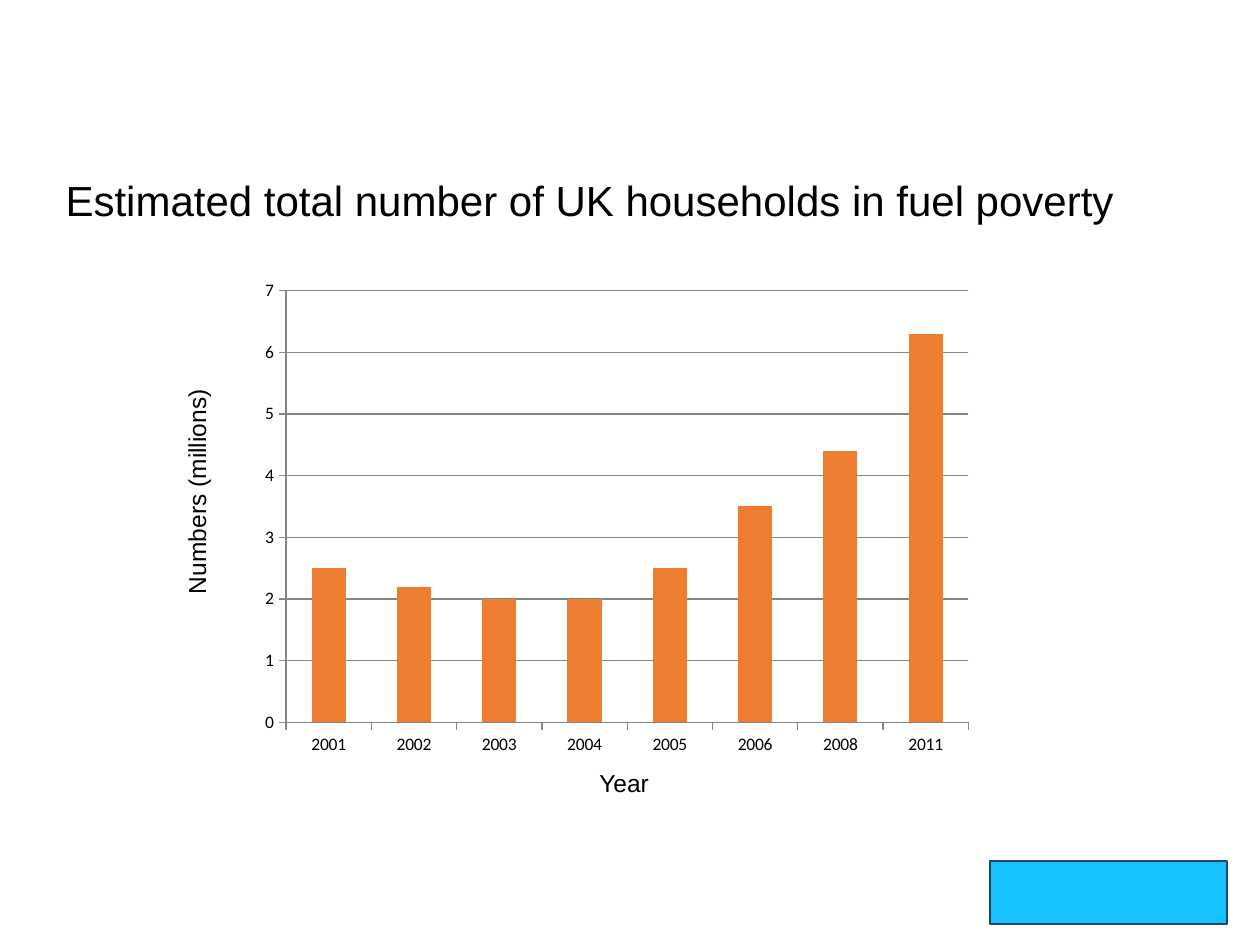
from dataclasses import dataclass

from lxml import etree
from pptx import Presentation
from pptx import util as u
from pptx.chart.data import CategoryChartData
from pptx.dml.color import RGBColor
from pptx.enum import chart as charts, shapes, text
from pptx.oxml.ns import qn

EMU_PER_PX = 914400 / 126
COLORS = {
    "text": "000000",
    "bar": "ED7D31",
    "axis": "868686",
    "accent": "15C2FF",
    "outline": "28445D",
}
HOUSEHOLDS = {
    "2001": 2.5,
    "2002": 2.2,
    "2003": 2,
    "2004": 2,
    "2005": 2.5,
    "2006": 3.5,
    "2008": 4.4,
    "2011": 6.3,
}
PLOT_LAYOUT = {"x": 0.046, "y": 0.022, "w": 0.949, "h": 0.904}


@dataclass(frozen=True)
class Box:
    left: int
    top: int
    width: int
    height: int

    def emu(self) -> list[int]:
        return [round(px * EMU_PER_PX)
                for px in (self.left, self.top, self.width, self.height)]


@dataclass(frozen=True)
class AxisLabel:
    wording: str
    box: Box
    rotation: int = 0


AXIS_LABELS = [
    AxisLabel("Numbers (millions)", Box(63, 451, 268, 43), 270),
    AxisLabel("Year", Box(587, 762, 87, 43)),
]


def color(name: str) -> RGBColor:
    return RGBColor.from_string(COLORS[name])


def write(shape, wording: str, *, size: int, font: str = "Arial",
          fill: str = "text") -> None:
    frame = shape.text_frame
    frame.word_wrap = True
    frame.auto_size = text.MSO_AUTO_SIZE.NONE
    frame.vertical_anchor = text.MSO_ANCHOR.TOP
    paragraph = frame.paragraphs[0]
    paragraph.alignment = text.PP_ALIGN.LEFT
    run = paragraph.add_run()
    run.text = wording
    run.font.size = u.Pt(size)
    run.font.name = font
    run.font.color.rgb = color(fill)


def add_title(slide, wording: str, box: Box) -> None:
    title = slide.shapes.title
    title.left, title.top, title.width, title.height = box.emu()
    write(title, wording, size=24)


def add_axis_label(slide, label: AxisLabel) -> None:
    shape = slide.shapes.add_textbox(*label.box.emu())
    shape.rotation = label.rotation
    write(shape, label.wording, size=14)


def add_accent(slide, box: Box) -> None:
    shape = slide.shapes.add_shape(shapes.MSO_SHAPE.RECTANGLE, *box.emu())
    shape.shadow.inherit = False
    shape.fill.solid()
    shape.fill.fore_color.rgb = color("accent")
    shape.line.color.rgb = color("outline")
    shape.line.width = u.Pt(1)


def style_line(line) -> None:
    line.color.rgb = color("axis")
    line.width = u.Pt(0.75)


def set_plot_layout(chart) -> None:
    plot_area = chart._chartSpace.chart.plotArea
    for old_layout in plot_area.findall(qn("c:layout")):
        plot_area.remove(old_layout)
    layout = etree.Element(qn("c:layout"))
    manual = etree.SubElement(layout, qn("c:manualLayout"))
    settings = {"layoutTarget": "inner", "xMode": "edge", "yMode": "edge"}
    for tag, value in (settings | PLOT_LAYOUT).items():
        etree.SubElement(manual, qn(f"c:{tag}")).set("val", str(value))
    plot_area.insert(0, layout)


def add_household_chart(slide, box: Box) -> None:
    data = CategoryChartData()
    data.categories = list(HOUSEHOLDS)
    data.add_series("Series 1", list(HOUSEHOLDS.values()))
    chart = slide.shapes.add_chart(
        charts.XL_CHART_TYPE.COLUMN_CLUSTERED, *box.emu(), data).chart
    chart.has_title = False
    chart.has_legend = False
    chart.font.name = "Calibri"
    chart.font.size = u.Pt(10)
    chart.font.color.rgb = color("text")

    plot = chart.plots[0]
    plot.gap_width = 150
    plot.vary_by_categories = False
    bars = plot.series[0].format.fill
    bars.solid()
    bars.fore_color.rgb = color("bar")

    for axis in (chart.category_axis, chart.value_axis):
        axis.major_tick_mark = charts.XL_TICK_MARK.OUTSIDE
        axis.minor_tick_mark = charts.XL_TICK_MARK.NONE
        style_line(axis.format.line)
    values = chart.value_axis
    values.minimum_scale = 0
    values.maximum_scale = 7
    values.major_unit = 1
    values.has_major_gridlines = True
    style_line(values.major_gridlines.format.line)
    set_plot_layout(chart)


def main() -> None:
    presentation = Presentation()
    presentation.slide_width = u.Inches(10)
    presentation.slide_height = u.Inches(7.5)
    slide = presentation.slides.add_slide(presentation.slide_layouts[5])
    add_accent(slide, Box(990, 861, 237, 63))
    add_title(slide, "Estimated total number of UK households in fuel poverty",
              Box(53, 168, 1154, 63))
    add_household_chart(slide, Box(253, 280, 719, 478))
    for label in AXIS_LABELS:
        add_axis_label(slide, label)
    presentation.save("out.pptx")


if __name__ == "__main__":
    main()
